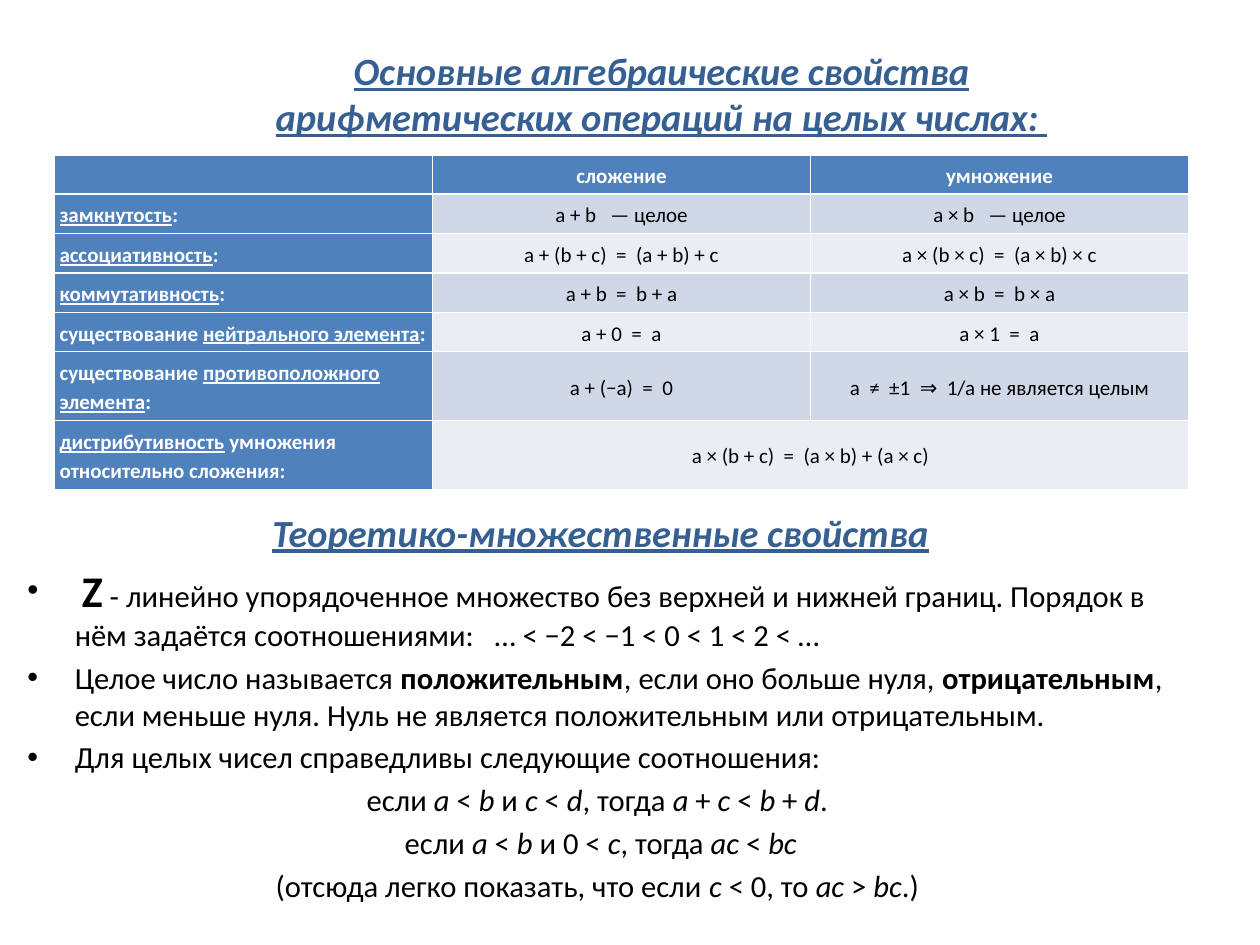
from lxml.etree import SubElement
from pptx import Presentation
from pptx.dml.color import RGBColor
from pptx.enum.text import MSO_ANCHOR as Anchor, MSO_AUTO_SIZE as AutoSize, PP_ALIGN as Align
from pptx.oxml.ns import qn
from pptx.util import Cm, Pt

COLORS = {
    "heading": "376092", "text": "000000", "light": "FFFFFF",
    "head": "4F81BD", "band_dark": "D0D8E8", "band_light": "E9EDF4",
}

HEADING = dict(color="heading", bold=True, italic=True, underline=True)

# Pieces between bars are underlined
PROPERTIES = [
    ("|замкнутость|:", "a + b   — целое", "a × b   — целое"),
    ("|ассоциативность|:", "a + (b + c)  =  (a + b) + c", "a × (b × c)  =  (a × b) × c"),
    ("|коммутативность|:", "a + b  =  b + a", "a × b  =  b × a"),
    ("существование |нейтрального элемента|:", "a + 0  =  a", "a × 1  =  a"),
    ("существование |противоположного элемента|:", "a + (−a)  =  0",
     "a  ≠  ±1  ⇒  1/a не является целым"),
    ("|дистрибутивность| умножения относительно сложения:",
     "a × (b + c)  =  (a × b) + (a × c)", ""),
]

# Pieces between bars are italic
RELATIONS = [
    "если |a| < |b| и |c| < |d|, тогда |a| + |c| < |b| + |d|. ",
    "если |a| < |b| и 0 < |c|, тогда |ac| < |bc|",
    "(отсюда легко показать, что если |c| < 0, то |ac| > |bc|.) ",
]


def write(para, text, size=17.5, color="text", mark=None, **styles):
    """Add text to a paragraph; pieces between bars get the style named by mark."""
    for index, piece in enumerate(text.split("|")):
        if not piece:
            continue
        span = para.add_run()
        span.text = piece
        font = span.font
        font.name, font.size = "Calibri", Pt(size)
        font.color.rgb = RGBColor.from_string(COLORS[color])
        for style in ("bold", "italic", "underline"):
            setattr(font, style, styles.get(style, False) or (style == mark and index % 2 == 1))


def set_indent(para, margin, bullet=True):
    props = para._p.get_or_add_pPr()
    props.set("marL", str(margin))
    props.set("indent", "0")
    if not bullet:
        SubElement(props, qn("a:buNone"))


def place(shape, box):
    shape.left, shape.top, shape.width, shape.height = box
    shape.text_frame.auto_size = AutoSize.NONE
    shape.text_frame.word_wrap = True
    return shape.text_frame


def fill_title(shape, box):
    frame = place(shape, box)
    frame.vertical_anchor = Anchor.MIDDLE
    frame.margin_bottom = Cm(1.07)
    para = frame.paragraphs[0]
    para.alignment = Align.CENTER
    set_indent(para, Cm(1.27))
    write(para, "Основные алгебраические свойства", size=22, **HEADING)
    para.add_line_break()
    write(para, "арифметических операций на целых числах: ", size=22, **HEADING)


def fill_body(shape, box):
    frame = place(shape, box)

    def centre(para):
        para.alignment = Align.CENTER
        set_indent(para, 0, bullet=False)
        return para

    # Heading
    write(centre(frame.paragraphs[0]), "Теоретико-множественные свойства", size=21.9, **HEADING)

    # Bulleted statements
    order = frame.add_paragraph()
    write(order, " ", size=18.1, bold=True)
    write(order, "Z", size=25, bold=True)
    write(order, " - линейно упорядоченное множество без верхней и нижней границ. "
                 "Порядок в нём задаётся соотношениями:   … < −2 < −1 < 0 < 1 < 2 < …")
    write(frame.add_paragraph(),
          "Целое число называется |положительным|, если оно больше нуля, |отрицательным|, "
          "если меньше нуля. Нуль не является положительным или отрицательным.", mark="bold")
    write(frame.add_paragraph(), "Для целых чисел справедливы следующие соотношения:")

    # Centred relations
    for relation in RELATIONS:
        write(centre(frame.add_paragraph()), relation, mark="italic")


def fill_cell(cell, text, fill, align=Align.CENTER, **styles):
    cell.fill.solid()
    cell.fill.fore_color.rgb = RGBColor.from_string(COLORS[fill])
    cell.vertical_anchor = Anchor.MIDDLE
    cell.margin_left = cell.margin_right = cell.margin_top = cell.margin_bottom = Cm(0.1)
    para = cell.text_frame.paragraphs[0]
    para.alignment = align
    para.line_spacing = 1.15
    if text:
        write(para, text, size=12, **styles)
    else:
        SubElement(para._p, qn("a:endParaRPr")).set("sz", "1200")


def add_properties(page, box):
    table = page.shapes.add_table(len(PROPERTIES) + 1, 3, *box).table
    table.first_col = True
    for column in table.columns:
        column.width = box[2] // 3
    for index, row in enumerate(table.rows):
        row.height = Cm(0.71 if index < 5 else 1.24)

    # Header row
    for column, text in enumerate(("", "сложение", "умножение")):
        fill_cell(table.cell(0, column), text, "head", color="light", bold=True)

    # Property rows
    for row, (name, *formulas) in enumerate(PROPERTIES, start=1):
        fill_cell(table.cell(row, 0), name, "head", Align.LEFT,
                  color="light", bold=True, mark="underline")
        band = "band_dark" if row % 2 else "band_light"
        for column, formula in enumerate(formulas, start=1):
            fill_cell(table.cell(row, column), formula, band)
    last = len(PROPERTIES)
    table.cell(last, 1).merge(table.cell(last, 2))


def main():
    deck = Presentation()
    deck.slide_width, deck.slide_height = Cm(25.4), Cm(19.05)
    page = deck.slides.add_slide(deck.slide_layouts[1])
    fill_title(page.shapes.title, (Cm(1.27), Cm(0.76), Cm(22.86), Cm(3.18)))
    fill_body(page.placeholders[1], (Cm(0.3), Cm(10.13), Cm(23.62), Cm(8.41)))
    add_properties(page, (Cm(1.1), Cm(3.12), Cm(22.86), Cm(6.73)))
    deck.save("out.pptx")


if __name__ == "__main__":
    main()
